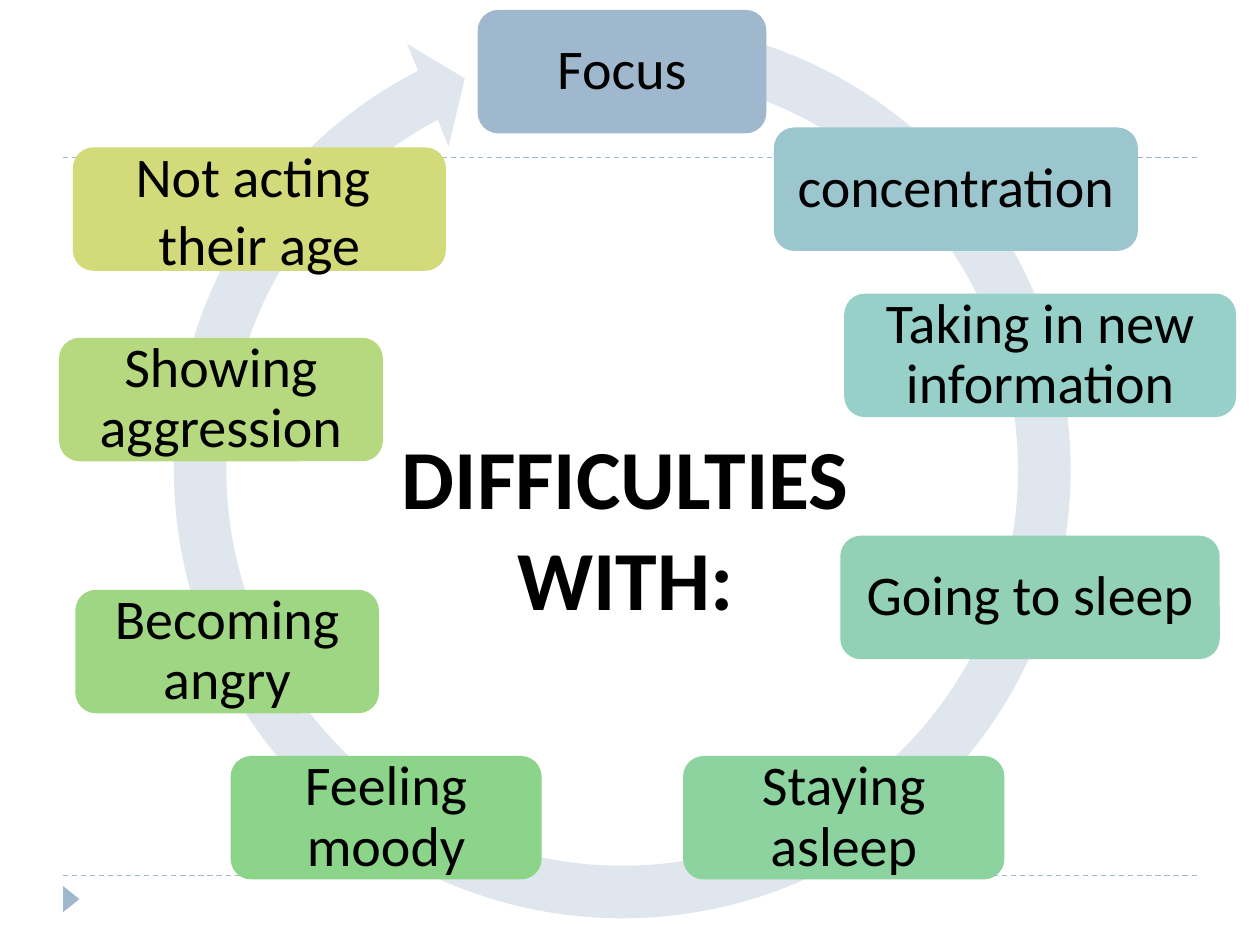
from dataclasses import dataclass

from lxml import etree
from pptx import Presentation
from pptx.dml.color import RGBColor
from pptx.enum.dml import MSO_LINE
from pptx.enum.shapes import MSO_CONNECTOR, MSO_SHAPE
from pptx.enum.text import MSO_ANCHOR, PP_ALIGN
from pptx.oxml.ns import qn
from pptx.util import Cm, Pt

STRAIGHT = MSO_CONNECTOR.STRAIGHT
ROUND = MSO_SHAPE.ROUNDED_RECTANGLE
RING = MSO_SHAPE.CIRCULAR_ARROW
WEDGE = MSO_SHAPE.ISOSCELES_TRIANGLE
DASH = MSO_LINE.DASH
MIDDLE = MSO_ANCHOR.MIDDLE
CENTER = PP_ALIGN.CENTER


@dataclass(frozen=True)
class Theme:
    font: str = "Calibri"
    ink: str = "000000"
    rule: str = "9FB8CD"
    ring: str = "DFE6ED"
    body: int = 32
    title: int = 48


THEME = Theme()
CARD_HIGH = 2.49
INSET = 0.33
TIGHT = 0.9
RING_BENDS = (0.055, 3.307, 145.55, 169.278, 0.058)

CARDS = [
    (9.63, 0.2, 5.82, "9FB8CD", ["Focus"]),
    (15.6, 2.57, 7.34, "9BC6CE", ["concentration"]),
    (17.02, 5.92, 7.9, "96D0C8", ["Taking in new information"]),
    (16.94, 10.8, 7.65, "92D1B6", ["Going to sleep"]),
    (13.77, 15.24, 6.48, "8DD3A0", ["Staying asleep"]),
    (4.65, 15.24, 6.27, "8BD489", ["Feeling moody"]),
    (1.52, 11.89, 6.12, "9ED684", ["Becoming angry"]),
    (1.19, 6.81, 6.53, "B6D87F", ["Showing aggression"]),
    (1.47, 2.97, 7.52, "D2DA7A", ["Not acting ", "their age"]),
]


def add_rule(slide, y):
    rule = slide.shapes.add_connector(STRAIGHT, Cm(1.27), Cm(y), Cm(24.13), Cm(y))
    rule.line.color.rgb = RGBColor.from_string(THEME.rule)
    rule.line.width = Pt(0.75)
    rule.line.dash_style = DASH
    etree.SubElement(rule._element.spPr, qn("a:effectLst"))


def add_form(slide, kind, x, y, wide, high, color):
    form = slide.shapes.add_shape(kind, Cm(x), Cm(y), Cm(wide), Cm(high))
    form.shadow.inherit = False
    form.fill.solid()
    form.fill.fore_color.rgb = RGBColor.from_string(color)
    form.line.fill.background()
    return form


def add_text(frame, lines, size, bold=False, space=None):
    frame.word_wrap = True
    for i, line in enumerate(lines):
        para = frame.add_paragraph() if i else frame.paragraphs[0]
        para.alignment = CENTER
        para.line_spacing = space
        run = para.add_run()
        run.text = line
        run.font.name = THEME.font
        run.font.size = Pt(size)
        run.font.bold = bold
        run.font.color.rgb = RGBColor.from_string(THEME.ink)


def add_ring(slide):
    ring = add_form(slide, RING, 2.92, -0.15, 19.25, 19.25, THEME.ring)
    for i, bend in enumerate(RING_BENDS):
        ring.adjustments[i] = bend


def add_card(slide, x, y, wide, color, lines):
    card = add_form(slide, ROUND, x, y, wide, CARD_HIGH, color)
    frame = card.text_frame
    frame.margin_left = frame.margin_right = Cm(INSET)
    frame.margin_top = frame.margin_bottom = Cm(INSET)
    frame.vertical_anchor = MIDDLE
    add_text(frame, lines, THEME.body, space=TIGHT if len(lines) == 1 else None)


def add_title(slide):
    box = slide.shapes.add_textbox(Cm(6.45), Cm(8.46), Cm(12.7), Cm(4.37))
    add_text(box.text_frame, ["DIFFICULTIES ", "WITH: "], THEME.title, bold=True)


def main():
    deck = Presentation()
    deck.slide_width, deck.slide_height = Cm(25.4), Cm(19.05)
    slide = deck.slides.add_slide(deck.slide_layouts[6])
    for y in (17.65, 3.18):
        add_rule(slide, y)
    wedge = add_form(slide, WEDGE, 1.17, 17.96, 0.53, 0.33, THEME.rule)
    wedge.rotation = 90
    add_ring(slide)
    for card in CARDS:
        add_card(slide, *card)
    add_title(slide)
    deck.save("out.pptx")


if __name__ == "__main__":
    main()
